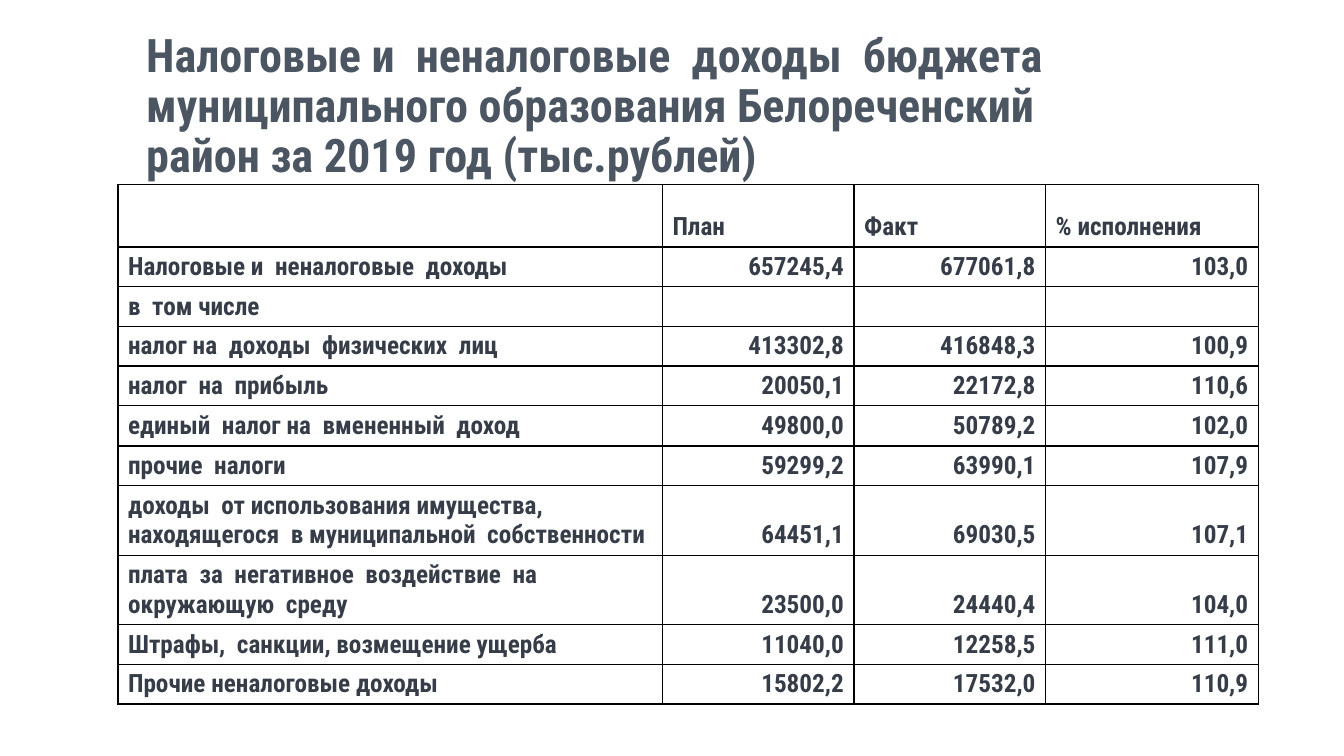
from lxml import etree
from pptx import Presentation
from pptx.dml.color import RGBColor
from pptx.enum.text import MSO_ANCHOR, MSO_AUTO_SIZE, PP_ALIGN
from pptx.oxml.ns import qn
from pptx.util import Inches, Pt

LEFT, RIGHT = PP_ALIGN.LEFT, PP_ALIGN.RIGHT
MIDDLE, BOTTOM = MSO_ANCHOR.MIDDLE, MSO_ANCHOR.BOTTOM
NO_AUTOFIT = MSO_AUTO_SIZE.NONE

FONT = "Roboto Condensed"
COLORS = {"title": "4C5662", "text": "363D48", "border": "000000"}

TITLE = ("Налоговые и  неналоговые  доходы  бюджета муниципального образования "
         "Белореченский  район за 2019 год (тыс.рублей)")
HEADER = ("", "План", "Факт", "% исполнения")
INCOME = [
    ("Налоговые и  неналоговые  доходы", "657245,4", "677061,8", "103,0"),
    ("в  том числе", "", "", ""),
    ("налог на  доходы  физических  лиц", "413302,8", "416848,3", "100,9"),
    ("налог  на  прибыль", "20050,1", "22172,8", "110,6"),
    ("единый  налог на  вмененный  доход", "49800,0", "50789,2", "102,0"),
    ("прочие  налоги", "59299,2", "63990,1", "107,9"),
    ("доходы  от использования имущества, находящегося  в муниципальной  собственности",
     "64451,1", "69030,5", "107,1"),
    ("плата  за  негативное  воздействие  на окружающую  среду",
     "23500,0", "24440,4", "104,0"),
    ("Штрафы,  санкции, возмещение ущерба", "11040,0", "12258,5", "111,0"),
    ("Прочие неналоговые доходы", "15802,2", "17532,0", "110,9"),
]
COL_WIDTHS = (5.4, 1.9, 1.9, 2.11)
ROW_HEIGHTS = (0.62, 0.39, 0.39, 0.39, 0.39, 0.4, 0.39, 0.69, 0.69, 0.39, 0.39)


def add_text(tf, text, size, color, align=LEFT, line_spacing=None):
    p = tf.paragraphs[0]
    p.alignment = align
    p.line_spacing = line_spacing
    r = p.add_run()
    r.text = text
    r.font.name = FONT
    r.font.size = Pt(size)
    r.font.bold = True
    r.font.color.rgb = RGBColor.from_string(COLORS[color])


def add_borders(cell):
    """Draw a 1 pt line on all four sides; call before setting the fill."""
    tc_pr = cell._tc.get_or_add_tcPr()
    for side in ("lnL", "lnR", "lnT", "lnB"):
        ln = etree.SubElement(tc_pr, qn(f"a:{side}"), w=str(Pt(1)))
        fill = etree.SubElement(ln, qn("a:solidFill"))
        etree.SubElement(fill, qn("a:srgbClr"), val=COLORS["border"])


def add_title(slide):
    title = slide.shapes.title
    title.left, title.top = Inches(1.35), Inches(0.21)
    title.width, title.height = Inches(9.82), Inches(1.71)
    tf = title.text_frame
    tf.word_wrap = True
    tf.auto_size = NO_AUTOFIT
    tf.vertical_anchor = MIDDLE
    add_text(tf, TITLE, 33, "title", line_spacing=0.9)


def add_income_table(slide):
    rows = [HEADER, *INCOME]
    table = slide.shapes.add_table(
        len(rows), len(HEADER), Inches(1.17), Inches(1.83),
        Inches(sum(COL_WIDTHS)), Inches(sum(ROW_HEIGHTS))).table
    table.first_row = table.horz_banding = False
    for column, width in zip(table.columns, COL_WIDTHS):
        column.width = Inches(width)
    for row, height in zip(table.rows, ROW_HEIGHTS):
        row.height = Inches(height)
    for i, values in enumerate(rows):
        for j, value in enumerate(values):
            cell = table.cell(i, j)
            add_borders(cell)
            cell.fill.background()
            cell.vertical_anchor = BOTTOM
            add_text(cell.text_frame, value, 18, "text",
                     align=RIGHT if i and j else LEFT)


def main():
    prs = Presentation()
    prs.slide_width, prs.slide_height = Inches(13.33), Inches(7.5)
    slide = prs.slides.add_slide(prs.slide_layouts[5])
    add_title(slide)
    add_income_table(slide)
    prs.save("out.pptx")


if __name__ == "__main__":
    main()
